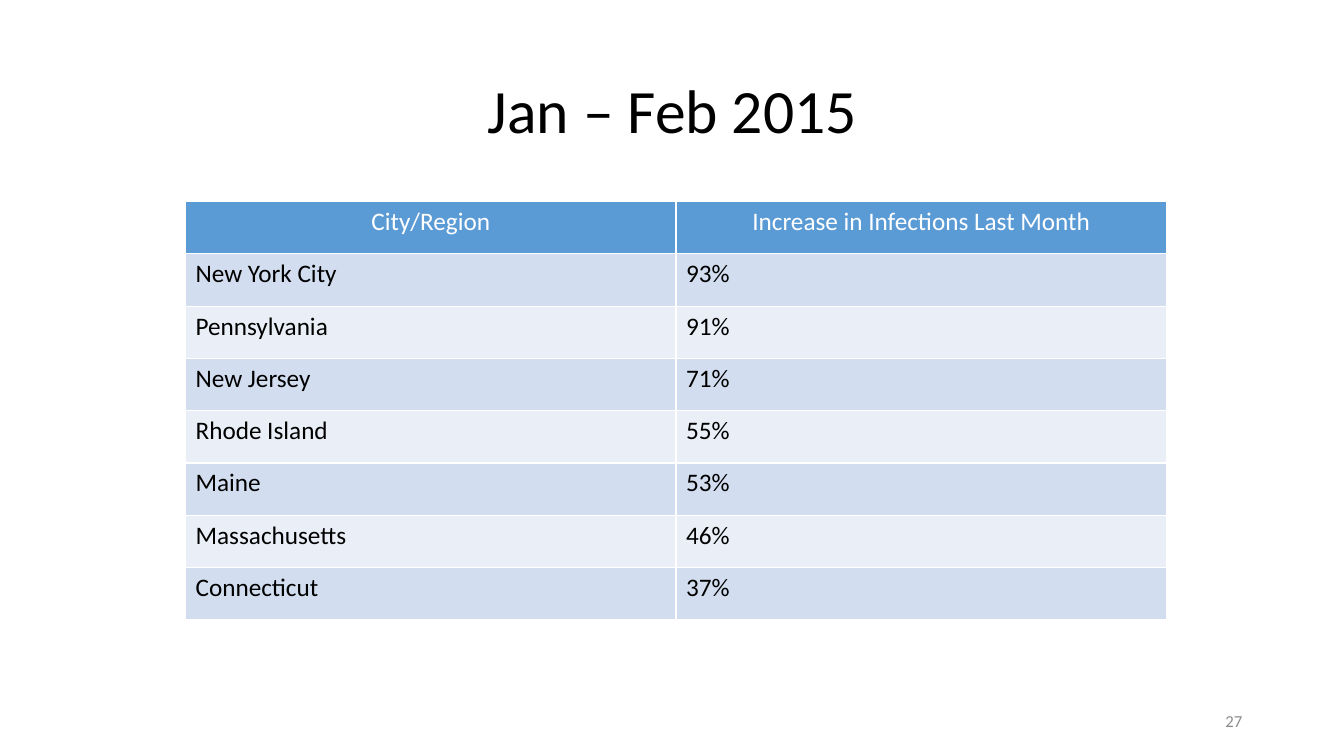
from pptx import Presentation
from pptx.dml.color import RGBColor
from pptx.enum.text import MSO_ANCHOR, PP_ALIGN
from pptx.util import Inches, Pt


def rgb(value):
    return RGBColor.from_string(value)


class SlideBuilder:
    """Holds the style and the current slide, and adds elements to it."""

    font = "Calibri"
    black, white, grey = "000000", "FFFFFF", "8C8C8C"
    header_fill = "5B9BD5"
    band_fills = ("D2DEEF", "EAEFF7")

    def __init__(self, slide):
        self.s = slide

    def paragraph(self, p, text, size, color, align):
        p.text = text
        p.alignment = align
        p.font.name = self.font
        p.font.size = Pt(size)
        p.font.bold = False
        p.font.color.rgb = rgb(color)

    def text(self, box, text, size, color, align, line_spacing=1.0):
        tf = self.s.shapes.add_textbox(*map(Inches, box)).text_frame
        tf.word_wrap = True
        tf.vertical_anchor = MSO_ANCHOR.MIDDLE
        p = tf.paragraphs[0]
        self.paragraph(p, text, size, color, align)
        p.line_spacing = line_spacing

    def table(self, box, rows):
        shape = self.s.shapes.add_table(len(rows), len(rows[0]), *map(Inches, box))
        for i, row in enumerate(rows):
            if i == 0:
                fill, color, align = self.header_fill, self.white, PP_ALIGN.CENTER
            else:
                fill, color, align = self.band_fills[(i - 1) % 2], self.black, PP_ALIGN.LEFT
            for j, text in enumerate(row):
                cell = shape.table.cell(i, j)
                cell.fill.solid()
                cell.fill.fore_color.rgb = rgb(fill)
                self.paragraph(cell.text_frame.paragraphs[0], text, 18, color, align)


def main():
    prs = Presentation()
    prs.slide_width, prs.slide_height = Inches(13.33), Inches(7.5)
    s = SlideBuilder(prs.slides.add_slide(prs.slide_layouts[6]))
    s.text((0.92, 0.4, 11.5, 1.45), "Jan – Feb 2015", 44, s.black, PP_ALIGN.CENTER, 0.9)
    s.table((1.84, 2, 9.73, 4.15), [
        ("City/Region", "Increase in Infections Last Month"),
        ("New York City", "93%"),
        ("Pennsylvania", "91%"),
        ("New Jersey", "71%"),
        ("Rhode Island", "55%"),
        ("Maine", "53%"),
        ("Massachusetts", "46%"),
        ("Connecticut", "37%"),
    ])
    s.text((9.42, 6.95, 3, 0.4), "27", 12, s.grey, PP_ALIGN.RIGHT)
    prs.save("out.pptx")


if __name__ == "__main__":
    main()
